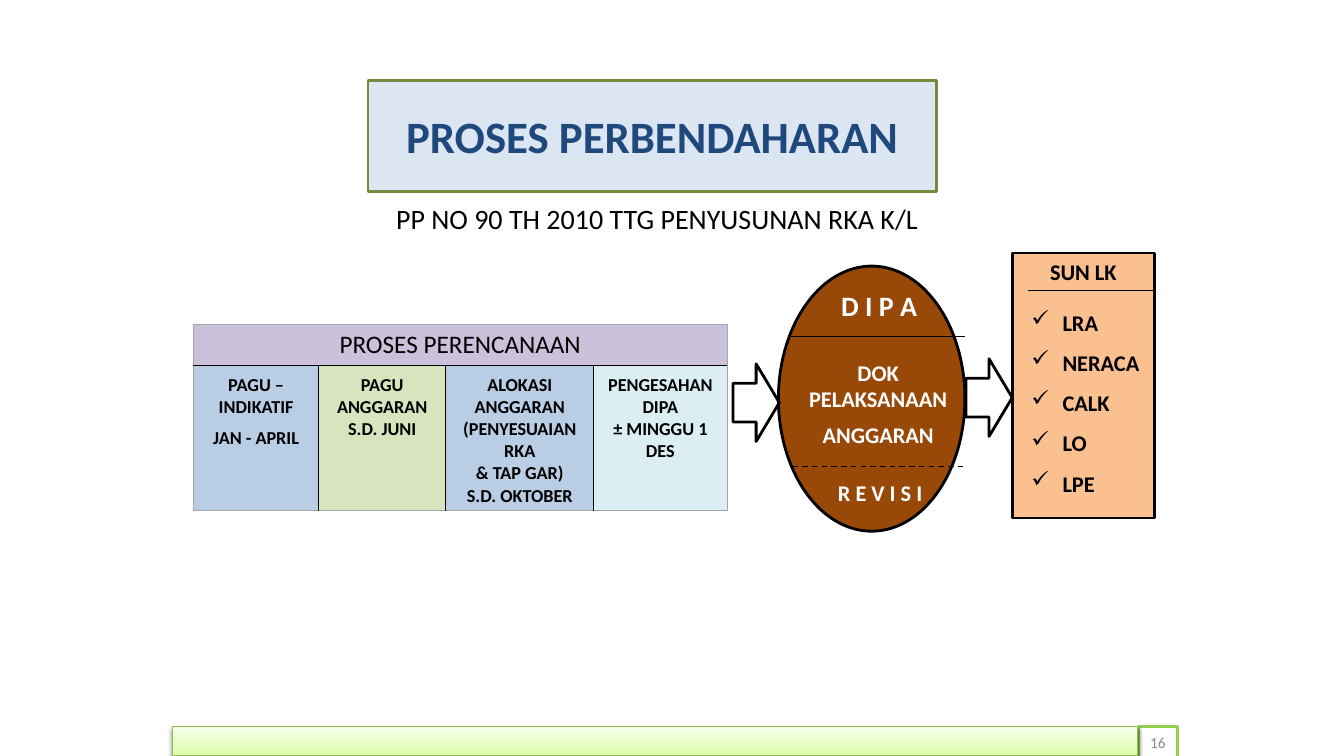
from lxml.etree import SubElement
from pptx import Presentation
from pptx.dml.color import RGBColor
from pptx.enum.dml import MSO_LINE
from pptx.enum.shapes import MSO_CONNECTOR, MSO_SHAPE
from pptx.enum.text import MSO_ANCHOR, MSO_AUTO_SIZE, PP_ALIGN
from pptx.oxml import parse_xml
from pptx.oxml.ns import nsdecls, qn
from pptx.util import Inches, Pt


def color(hex_value):
    return RGBColor.from_string(hex_value)


class SlideBuilder:
    """Holds the text style and the slide that is being filled."""

    font = {"name": "Calibri", "size": Pt(16), "bold": True}
    text_color = "000000"

    def __init__(self, slide):
        self.slide = slide
        self.shapes = slide.shapes

    def place(self, shape, box):
        for name, value in zip(("left", "top", "width", "height"), box):
            setattr(shape, name, Inches(value))

    def outline(self, line, hex_value, width):
        line.color.rgb = color(hex_value)
        line.width = Pt(width)

    def paint(self, shape, fill, line, width=2):
        if fill:
            shape.fill.solid()
            shape.fill.fore_color.rgb = color(fill)
        else:
            shape.fill.background()
        self.outline(shape.line, line, width)

    def add_lines(self, frame, lines, align=PP_ALIGN.CENTER, after=0, spacing=None,
                  text_color=None, bullet=None, text_shadow=False, **font):
        for index, text in enumerate(lines):
            paragraph = frame.paragraphs[0] if index == 0 else frame.add_paragraph()
            layout = {"alignment": align, "space_after": Pt(after), "line_spacing": spacing}
            for name, value in layout.items():
                setattr(paragraph, name, value)
            run = paragraph.add_run()
            run.text = text
            for name, value in {**self.font, **font}.items():
                setattr(run.font, name, value)
            run.font.color.rgb = color(text_color or self.text_color)
            if text_shadow:
                fill = run._r.get_or_add_rPr().find(qn("a:solidFill"))
                fill.addnext(parse_xml(
                    f'<a:effectLst {nsdecls("a")}><a:outerShdw blurRad="38100" dist="38100" '
                    'dir="2700000"><a:srgbClr val="000000"/></a:outerShdw></a:effectLst>'))
            if bullet:
                properties = paragraph._p.get_or_add_pPr()
                properties.set("marL", str(Inches(0.31)))
                properties.set("indent", str(Inches(-0.31)))
                SubElement(properties, qn("a:buChar")).set("char", bullet)

    def title(self, box, text, fill, line, **style):
        title = self.shapes.title
        self.place(title, box)
        self.paint(title, fill, line)
        frame = title.text_frame
        for name, value in {"auto_size": MSO_AUTO_SIZE.NONE, "word_wrap": True,
                            "vertical_anchor": MSO_ANCHOR.MIDDLE}.items():
            setattr(frame, name, value)
        self.add_lines(frame, [text], **style)

    def shape(self, kind, box, fill, line, width=2, lines=(),
              anchor=MSO_ANCHOR.TOP, **style):
        shape = self.shapes.add_shape(kind, *map(Inches, box))
        shape.shadow.inherit = False
        self.paint(shape, fill, line, width)
        shape.text_frame.vertical_anchor = anchor
        self.add_lines(shape.text_frame, lines, **style)
        return shape

    def text(self, box, lines, anchor=MSO_ANCHOR.MIDDLE, wrap=True, **style):
        frame = self.shapes.add_textbox(*map(Inches, box)).text_frame
        frame.word_wrap = wrap
        frame.vertical_anchor = anchor
        self.add_lines(frame, lines, **style)

    def horizontal_line(self, left, right, y, dash=None):
        line = self.shapes.add_connector(
            MSO_CONNECTOR.STRAIGHT, *map(Inches, (left, y, right, y)))
        self.outline(line.line, "000000", 1)
        line.line.dash_style = dash
        SubElement(line._element.spPr, qn("a:effectLst"))

    def table(self, box, widths, heights):
        table = self.shapes.add_table(
            len(heights), len(widths), *map(Inches, box)).table
        table.first_row = table.horz_banding = False
        for column, width in zip(table.columns, widths):
            column.width = Inches(width)
        for row, height in zip(table.rows, heights):
            row.height = Inches(height)
        return table

    def cell(self, cell, lines, fill, outer, top=0.08, anchor=MSO_ANCHOR.TOP, **style):
        margins = {"margin_left": 0.07, "margin_right": 0.07,
                   "margin_top": top, "margin_bottom": 0.05}
        for name, value in margins.items():
            setattr(cell, name, Inches(value))
        cell.vertical_anchor = anchor
        properties = cell._tc.get_or_add_tcPr()
        for side in "LRTB":
            width, hex_value = (0.5, "A6A6A6") if side in outer else (1, "000000")
            properties.append(parse_xml(
                f'<a:ln{side} {nsdecls("a")} w="{Pt(width)}"><a:solidFill>'
                f'<a:srgbClr val="{hex_value}"/></a:solidFill></a:ln{side}>'))
        cell.fill.solid()
        cell.fill.fore_color.rgb = color(fill)
        self.add_lines(cell.text_frame, lines, **style)

    def gradient_bar(self, box, stops, line):
        bar = self.shape(MSO_SHAPE.RECTANGLE, box, "FFFFFF", line, 0.75)
        properties = bar._element.spPr
        stop_xml = "".join(
            f'<a:gs pos="{position * 1000}"><a:srgbClr val="{value}"/></a:gs>'
            for position, value in stops)
        properties.replace(properties.find(qn("a:solidFill")), parse_xml(
            f'<a:gradFill {nsdecls("a")}><a:gsLst>{stop_xml}</a:gsLst>'
            '<a:lin ang="16200000" scaled="0"/></a:gradFill>'))
        properties.find(qn("a:effectLst")).append(parse_xml(
            f'<a:outerShdw {nsdecls("a")} blurRad="{Pt(3.1)}" dist="{Pt(1.6)}" dir="5400000">'
            '<a:srgbClr val="000000"><a:alpha val="38000"/></a:srgbClr></a:outerShdw>'))


def main():
    presentation = Presentation()
    presentation.slide_width, presentation.slide_height = Inches(13.33), Inches(7.5)
    builder = SlideBuilder(presentation.slides.add_slide(presentation.slide_layouts[5]))

    # Financial report panel
    builder.shape(MSO_SHAPE.RECTANGLE, (10.04, 2.51, 1.41, 2.63), "FAC090", "000000",
                  lines=["SUN LK"])
    builder.horizontal_line(10.2, 11.45, 2.88)
    builder.text((10.13, 2.88, 1.32, 2.12), ["LRA", "NERACA", "CALK", "LO", "LPE"],
                 anchor=MSO_ANCHOR.TOP, align=PP_ALIGN.LEFT, spacing=1.5, bullet="✓")

    # Title and regulation
    builder.title((3.65, 0.8, 5.64, 1.1), "PROSES PERBENDAHARAN", "DCE6F2", "738A42",
                  text_color="1F497D", size=Pt(32), after=6, text_shadow=True)
    builder.text((3.83, 1.95, 5.42, 0.44), ["PP NO 90 TH 2010 TTG PENYUSUNAN RKA K/L"],
                 anchor=MSO_ANCHOR.TOP, wrap=False, align=PP_ALIGN.LEFT,
                 size=Pt(20), bold=False)

    # Budget document ellipse
    builder.shape(MSO_SHAPE.OVAL, (7.72, 2.64, 1.85, 2.63), "984807", "000000")
    builder.horizontal_line(7.84, 9.57, 3.34)
    builder.horizontal_line(7.86, 9.56, 4.63, MSO_LINE.DASH)
    white = {"text_color": "FFFFFF", "after": 6}
    builder.text((8.17, 2.81, 1.1, 0.44), ["D I P A"], size=Pt(20), text_shadow=True, **white)
    builder.text((8.18, 4.67, 1.1, 0.44), ["R E V I S I"], text_shadow=True, **white)
    builder.text((7.8, 3.69, 1.82, 0.62), ["DOK PELAKSANAAN", "ANGGARAN"], **white)

    # Planning table
    steps = [
        ("B9CDE5", 1.24, ["PAGU – INDIKATIF", "JAN - APRIL"]),
        ("D7E4BD", 1.26, ["PAGU ANGGARAN", "S.D. JUNI"]),
        ("B9CDE5", 1.47, ["ALOKASI ANGGARAN", "(PENYESUAIAN RKA", "& TAP GAR)", "S.D. OKTOBER"]),
        ("DBEEF4", 1.32, ["PENGESAHAN DIPA", "± MINGGU 1 DES"]),
    ]
    table = builder.table((1.92, 3.22, 5.29, 1.83), [step[1] for step in steps], (0.41, 1.42))
    heading = table.cell(0, 0)
    heading.merge(table.cell(0, 3))
    builder.cell(heading, ["PROSES PERENCANAAN"], "CCC1DA", "LRT", top=0.05,
                 anchor=MSO_ANCHOR.MIDDLE, size=Pt(18), bold=False, after=6)
    for index, (fill, _, lines) in enumerate(steps):
        outer = "B" + {0: "L", len(steps) - 1: "R"}.get(index, "")
        builder.cell(table.cell(1, index), lines, fill, outer, size=Pt(13))
    table.cell(1, 0).text_frame.paragraphs[0].space_after = Pt(6)

    # Flow arrows
    for left, top in ((7.27, 3.61), (9.58, 3.56)):
        builder.shape(MSO_SHAPE.RIGHT_ARROW, (left, top, 0.46, 0.77), None, "000000")

    # Footer
    builder.shape(MSO_SHAPE.RECTANGLE, (11.29, 7.21, 0.39, 0.31), "FFFFFF", "92D050",
                  lines=["16"], anchor=MSO_ANCHOR.MIDDLE, text_color="8C8C8C",
                  size=Pt(11), bold=False)
    builder.gradient_bar((1.71, 7.21, 9.57, 0.29),
                         [(0, "DAFDA7"), (35, "E4FCC2"), (100, "F5FFE7")], "98B955")
    presentation.save("out.pptx")


if __name__ == "__main__":
    main()
